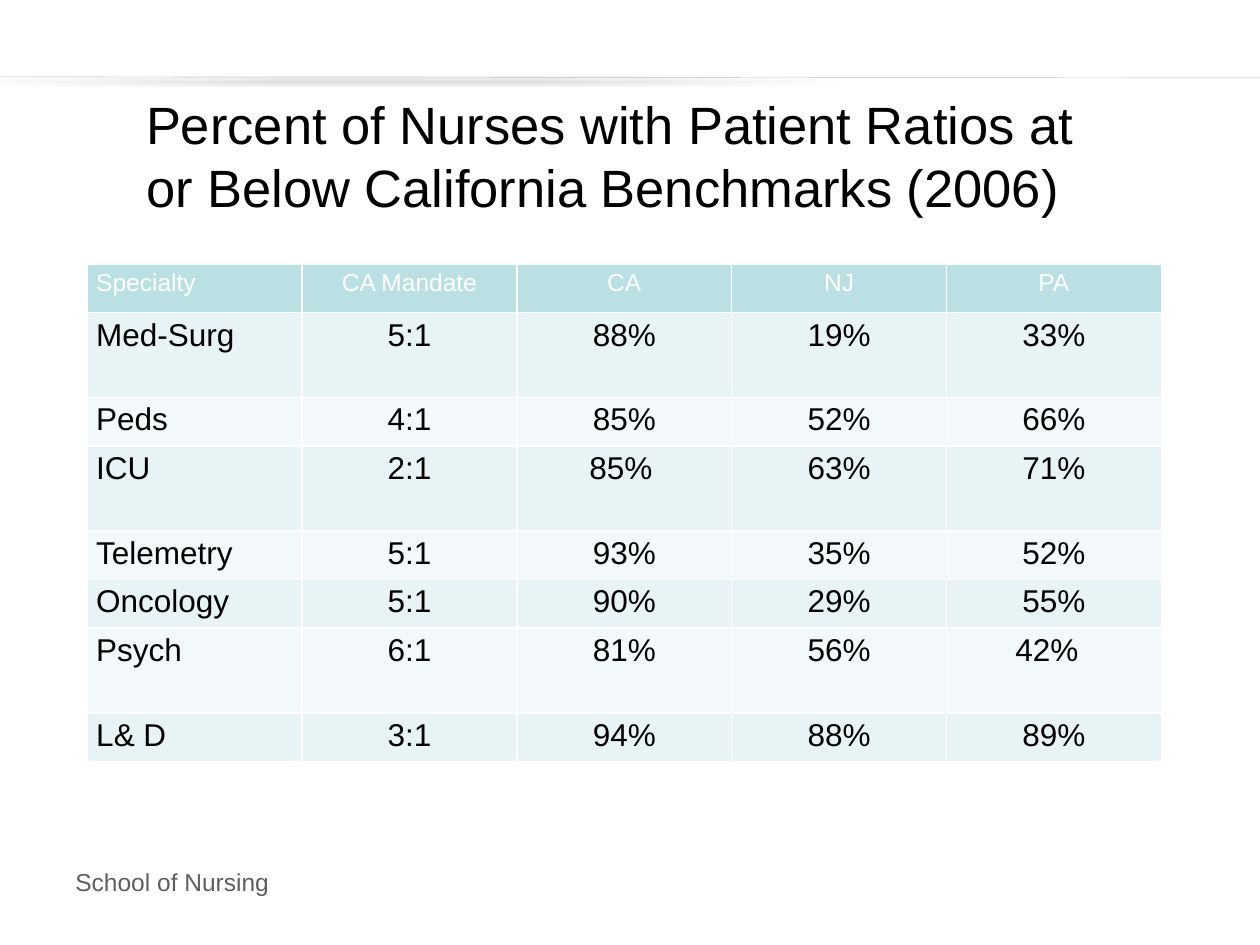
"""Build a slide with a table of nurse-to-patient ratios by specialty and state."""
from lxml.etree import SubElement as Sub
from pptx import Presentation
from pptx.dml.color import RGBColor as RGB
from pptx.enum.shapes import MSO_CONNECTOR as Link
from pptx.enum.text import MSO_ANCHOR as Anchor, PP_ALIGN as Align
from pptx.oxml.ns import qn
from pptx.util import Cm, Pt

HUES = {"head": "BBE0E3", "odd": "E7F3F4", "even": "F3F9FA", "rule": "BFBFBF",
        "foot": "5F5F5F", "white": "FFFFFF", "black": "000000"}
ROWS = [
    ("Specialty", "CA Mandate", "CA", "NJ", "PA"),
    ("Med-Surg", "5:1", "88%", "19%", "33%"),
    ("Peds", "4:1", "85%", "52%", "66%"),
    ("ICU", "2:1", "85%", "63%", "71%"),
    ("Telemetry", "5:1", "93%", "35%", "52%"),
    ("Oncology", "5:1", "90%", "29%", "55%"),
    ("Psych", "6:1", "81%", "56%", "42%"),
    ("L& D", "3:1", "94%", "88%", "89%"),
]
TALL = {"Med-Surg", "ICU", "Psych"}
NUDGE = {("ICU", 2): 0.32, ("Psych", 4): 0.46}


def style(part, size, hue, align=Align.LEFT):
    """Format the first paragraph of a text frame."""
    line = part.paragraphs[0]
    line.alignment = align
    looks = {"name": "Arial", "size": Pt(size), "bold": False}
    for key, value in looks.items():
        setattr(line.font, key, value)
    line.font.color.rgb = RGB.from_string(HUES[hue])


def place(shape, left, top, width, height):
    """Set position and size in centimetres."""
    box = {"left": left, "top": top, "width": width, "height": height}
    for key, value in box.items():
        setattr(shape, key, Cm(value))


deck = Presentation()
deck.slide_width, deck.slide_height = Cm(25.4), Cm(19.05)
slide = deck.slides.add_slide(deck.slide_layouts[5])
shapes = slide.shapes

foot = shapes.add_textbox(Cm(1.27), Cm(17.35), Cm(6.35), Cm(0.84))
foot.text_frame.word_wrap = True
foot.text_frame.text = "School of Nursing"
style(foot.text_frame, 14, "foot")

rule = shapes.add_connector(Link.STRAIGHT, Cm(0), Cm(1.55), Cm(25.4), Cm(1.57))
rule.line.width = Pt(0.25)
rule.line.color.rgb = RGB.from_string(HUES["rule"])
glow = Sub(Sub(rule.element.spPr, qn("a:effectLst")), qn("a:outerShdw"),
           blurRad=str(Pt(3.1)), dist=str(Pt(1.6)), dir="5400000", rotWithShape="0")
tint = Sub(glow, qn("a:srgbClr"), val=HUES["black"])
Sub(tint, qn("a:alpha"), val="38000")

title = shapes.title
place(title, 2.69, 1.93, 20.02, 2.39)
title.text_frame.text = "Percent of Nurses with Patient Ratios at or Below California Benchmarks (2006)"
title.text_frame.vertical_anchor = Anchor.MIDDLE
style(title.text_frame, 30, "black")

frame = shapes.add_table(len(ROWS), len(ROWS[0]), Cm(1.76), Cm(5.32), Cm(21.65), Cm(10.06))
table = frame.table
for col in table.columns:
    col.width = Cm(4.33)
for r, row in enumerate(ROWS):
    table.rows[r].height = Cm(1.71 if row[0] in TALL else 0.98)
    band = "head" if r == 0 else "odd" if r % 2 else "even"
    size, hue = (14, "white") if r == 0 else (18, "black")
    for c, word in enumerate(row):
        cell = table.cell(r, c)
        cell.text = word
        cell.fill.solid()
        cell.fill.fore_color.rgb = RGB.from_string(HUES[band])
        pads = {"left": 0.18, "right": NUDGE.get((row[0], c), 0.18), "top": 0.1, "bottom": 0.1}
        for side, pad in pads.items():
            setattr(cell, f"margin_{side}", Cm(pad))
        style(cell.text_frame, size, hue, Align.CENTER if c else Align.LEFT)

deck.save("out.pptx")
